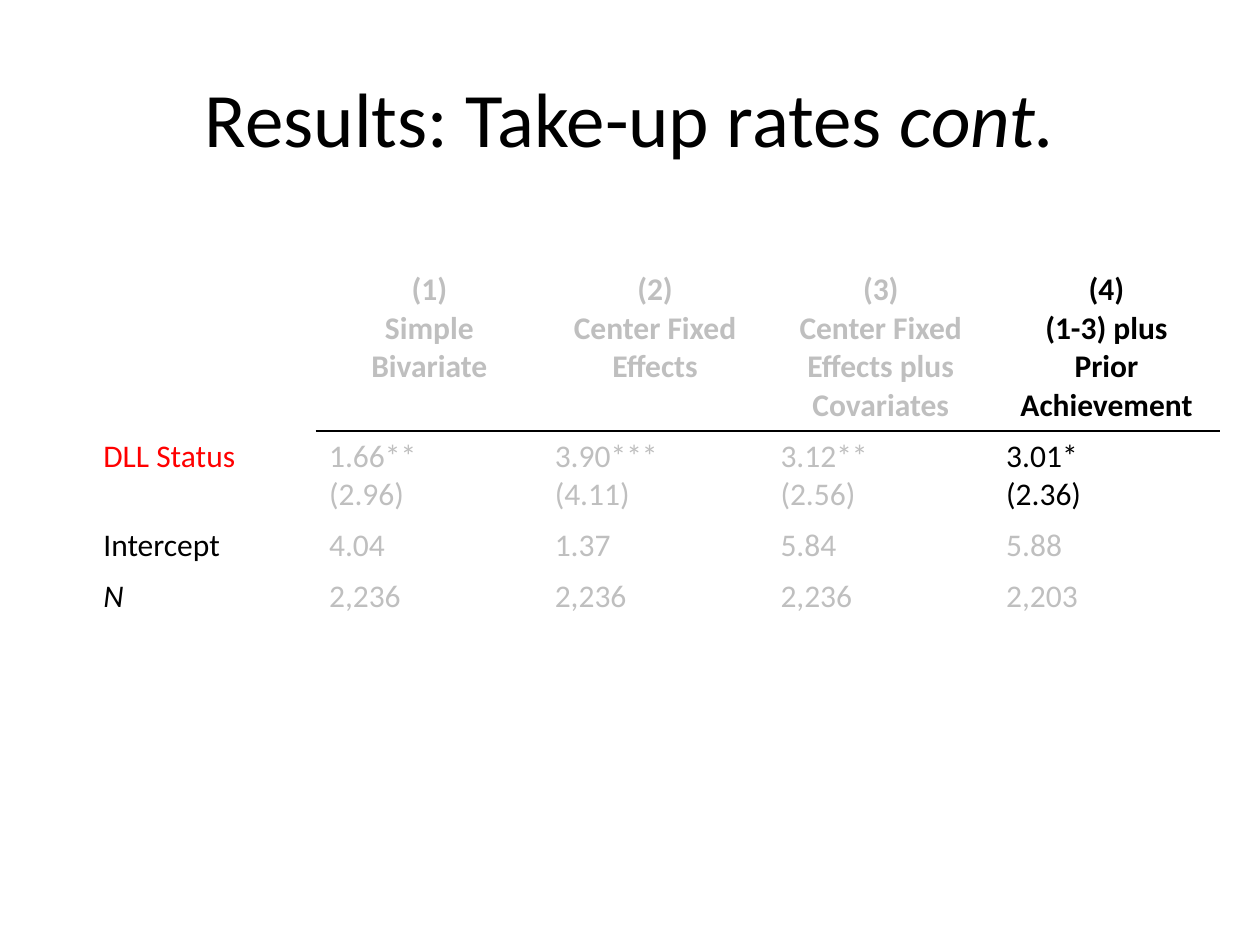
from lxml import etree
from pptx import Presentation
from pptx import util as u
from pptx.dml.color import RGBColor
from pptx.enum import text
from pptx.oxml import ns

BLACK = RGBColor(0x00, 0x00, 0x00)
GREY = RGBColor(0xBF, 0xBF, 0xBF)
RED = RGBColor(0xFF, 0x00, 0x00)
WHITE = RGBColor(0xFF, 0xFF, 0xFF)
FONT = "Calibri"

HEADERS = [
    ["(1)", "Simple Bivariate"],
    ["(2)", "Center Fixed Effects"],
    ["(3)", "Center Fixed Effects plus Covariates"],
    ["(4)", "(1-3) plus", "Prior Achievement"],
]
ROWS = [
    (["DLL Status"], ["1.66**", "(2.96)"], ["3.90***", "(4.11)"],
     ["3.12**", "(2.56)"], ["3.01*", "(2.36)"]),
    (["Intercept"], ["4.04"], ["1.37"], ["5.84"], ["5.88"]),
    (["N"], ["2,236"], ["2,236"], ["2,236"], ["2,203"]),
]
ROW_HEIGHTS = [3.35, 1.8, 1.03, 1.03]


def add_run(p, words, size=18, color=BLACK, bold=False, italic=False):
    """Append formatted text to a paragraph."""
    r = p.add_run()
    r.text = words
    r.font.name, r.font.size = FONT, u.Pt(size)
    r.font.bold, r.font.italic = bold, italic
    r.font.color.rgb = color


def fill_cell(cell, lines, align=text.PP_ALIGN.LEFT, **fmt):
    """Write one paragraph per line into a cell."""
    tf = cell.text_frame
    for i, line in enumerate(lines):
        p = tf.add_paragraph() if i else tf.paragraphs[0]
        p.alignment = align
        add_run(p, line, **fmt)


def rule_cell(cell, side):
    """Draw a black one-point rule on one side (lnT or lnB) of a cell."""
    ln = etree.Element(ns.qn(f"a:{side}"), w=str(u.Pt(1)))
    solid = etree.SubElement(ln, ns.qn("a:solidFill"))
    etree.SubElement(solid, ns.qn("a:srgbClr"), val=str(BLACK))
    cell._tc.get_or_add_tcPr().insert(0, ln)


def add_title(s, left, top, width, height):
    """Place and format the slide title."""
    sp = s.shapes.title
    sp.left, sp.top, sp.width, sp.height = map(u.Cm, (left, top, width, height))
    tf = sp.text_frame
    tf.vertical_anchor = text.MSO_ANCHOR.MIDDLE
    p = tf.paragraphs[0]
    p.alignment = text.PP_ALIGN.CENTER
    add_run(p, "Results: Take-up rates ", size=44)
    add_run(p, "cont.", size=44, italic=True)


def add_results(s, left, top, width):
    """Build the table of model estimates."""
    n_rows, n_cols = len(ROWS) + 1, len(HEADERS) + 1
    tbl = s.shapes.add_table(n_rows, n_cols, u.Cm(left), u.Cm(top), u.Cm(width),
                             u.Cm(sum(ROW_HEIGHTS))).table
    tbl.first_row = tbl.horz_banding = False
    for col in tbl.columns:
        col.width = u.Cm(width / n_cols)
    for row, height in zip(tbl.rows, ROW_HEIGHTS):
        row.height = u.Cm(height)
    for cell in tbl.iter_cells():
        cell.fill.solid()
        cell.fill.fore_color.rgb = WHITE

    for j, lines in enumerate(HEADERS, 1):
        color = BLACK if j == len(HEADERS) else GREY
        fill_cell(tbl.cell(0, j), lines, text.PP_ALIGN.CENTER, color=color, bold=True)
        rule_cell(tbl.cell(0, j), "lnB")
        rule_cell(tbl.cell(1, j), "lnT")
    for i, (label, *values) in enumerate(ROWS, 1):
        fill_cell(tbl.cell(i, 0), label, color=RED if i == 1 else BLACK,
                  italic=label == ["N"])
        for j, lines in enumerate(values, 1):
            focus = i == 1 and j == len(HEADERS)
            fill_cell(tbl.cell(i, j), lines, color=BLACK if focus else GREY)


def main():
    """Create the slide and save it."""
    prs = Presentation()
    prs.slide_width, prs.slide_height = u.Cm(25.4), u.Cm(19.05)
    s = prs.slides.add_slide(prs.slide_layouts[5])
    add_title(s, 1.27, 0.76, 22.86, 3.18)
    add_results(s, 1.83, 5.33, 22.75)
    prs.save("out.pptx")


if __name__ == "__main__":
    main()
